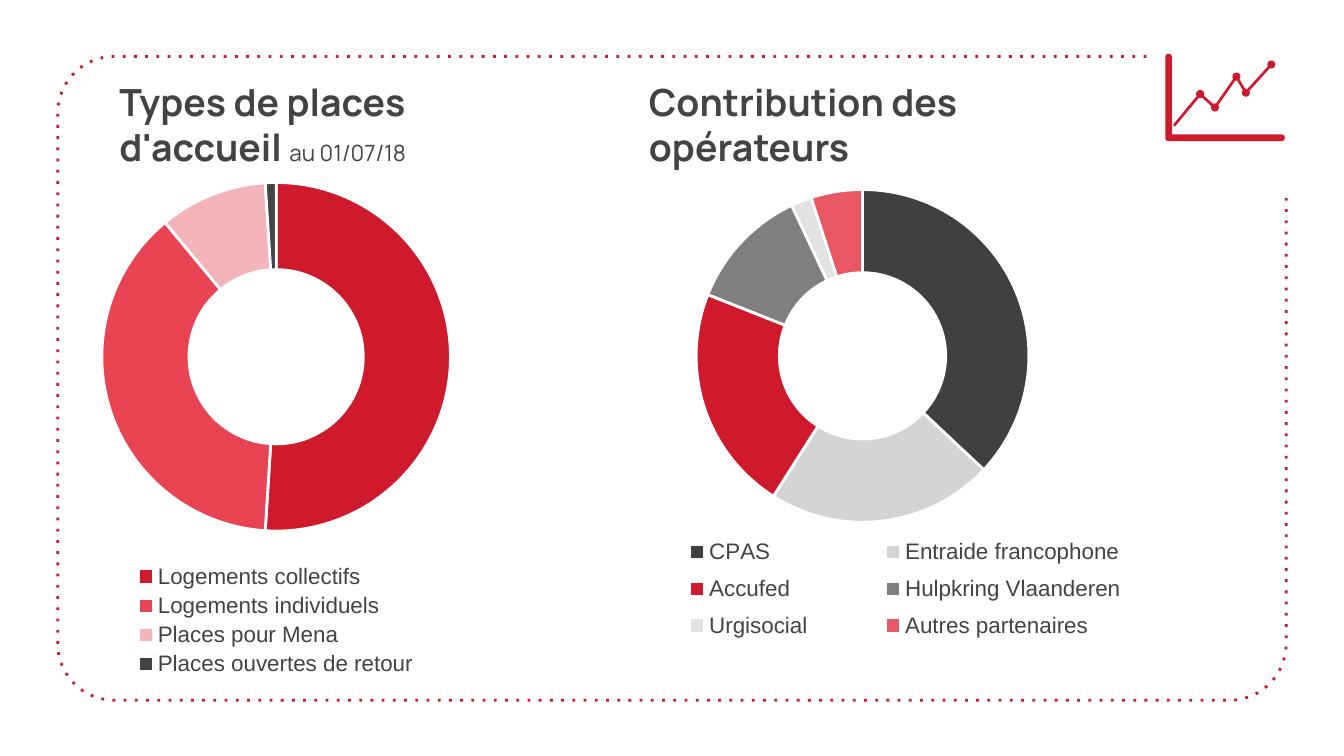
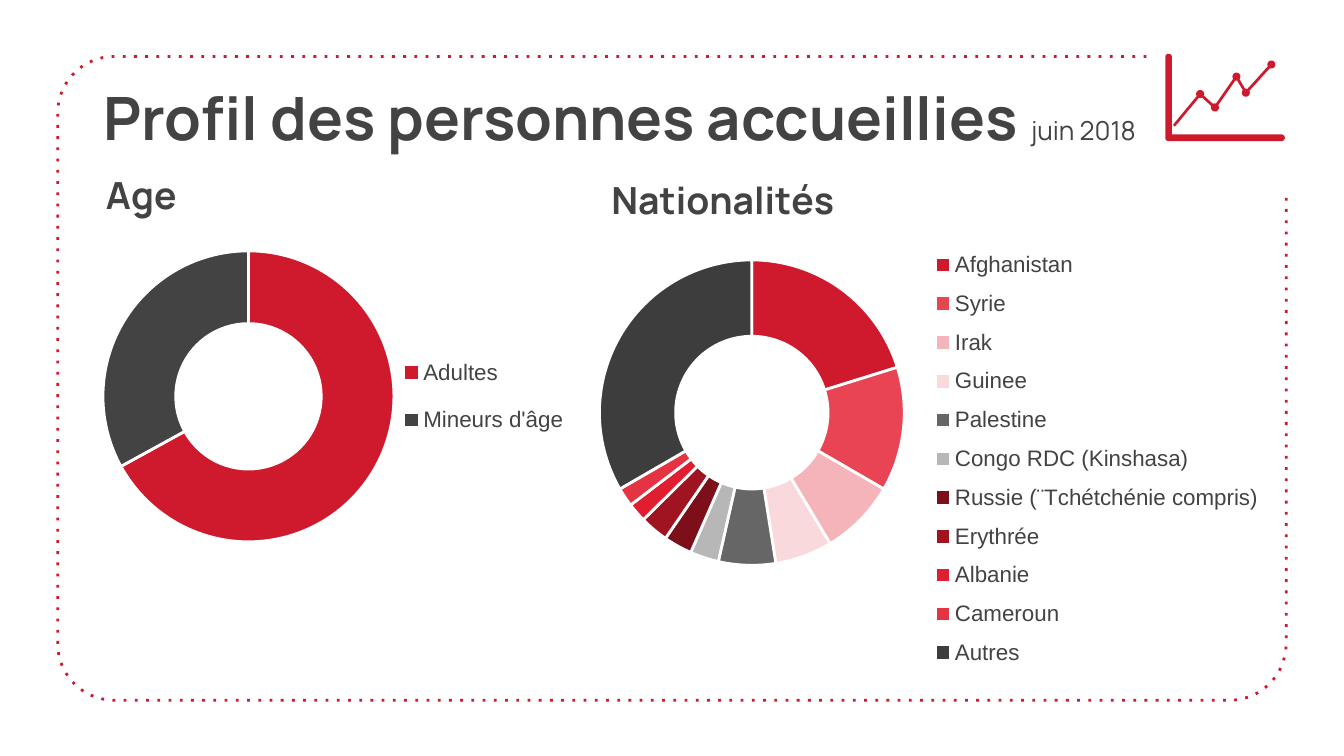
import math
from dataclasses import dataclass

import lxml.etree
import pptx
import pptx.chart.data
import pptx.dml.color
import pptx.enum.chart
import pptx.enum.text
import pptx.oxml.ns
import pptx.util

Inches = pptx.util.Inches
Pt = pptx.util.Pt
qn = pptx.oxml.ns.qn


@dataclass(frozen=True)
class Theme:
    heading_font: str = "Manrope"
    chart_font: str = "Arial"
    red: str = "CF192C"
    coral: str = "E84454"
    pink: str = "F5B4BA"
    pale_pink: str = "FAD9DC"
    text: str = "434343"
    grey: str = "7F7F7F"
    white: str = "FFFFFF"
    title_size: float = 32
    heading_size: float = 20
    date_size: float = 14
    small_date_size: float = 12
    legend_size: float = 12
    chart_size: float = 10


def rgb(value):
    return pptx.dml.color.RGBColor.from_string(value)


def apply(target, formats):
    for name, value in formats.items():
        setattr(target, name, value)


def arc(center, radius, start, end, steps):
    x, y = center
    angles = [start + (end - start) * step / steps for step in range(steps + 1)]
    return [(x + radius * math.cos(a), y + radius * math.sin(a)) for a in angles]


def marker_line_outline(nodes, marker_radius, half_width):
    walk = nodes + nodes[-2:0:-1]
    points = []
    for index, node in enumerate(walk):
        before, after = walk[index - 1], walk[(index + 1) % len(walk)]
        radius = half_width if index == 0 else marker_radius
        spread = math.asin(half_width / radius)
        start = math.atan2(before[1] - node[1], before[0] - node[0]) - spread
        end = math.atan2(after[1] - node[1], after[0] - node[0]) + spread
        sweep = (start - end) % math.tau
        points += arc(node, radius, start, start - sweep, 10)
    return points


class Deck:
    def __init__(self, theme):
        self.theme = theme
        self.presentation = pptx.Presentation()
        self.presentation.slide_width = Inches(10)
        self.presentation.slide_height = Inches(10) * 9 // 16
        self.slide = None

    def add_slide(self):
        layout = self.presentation.slide_layouts[6]
        self.slide = self.presentation.slides.add_slide(layout)
        fill = self.slide.background.fill
        fill.solid()
        fill.fore_color.rgb = rgb(self.theme.white)
        self.frame()
        self.trend_icon()

    def freeform(self, shapes, points, close=True):
        points = [(Inches(x), Inches(y)) for x, y in points]
        builder = shapes.build_freeform(*points[0])
        builder.add_line_segments(points[1:], close=close)
        shape = builder.convert_to_shape()
        shape.shadow.inherit = False
        return shape

    def frame(self):
        left, top, right, bottom, radius = 0.43, 0.42, 9.57, 5.21, 0.42
        corners = [
            ((left + radius, top + radius), -math.pi / 2),
            ((left + radius, bottom - radius), -math.pi),
            ((right - radius, bottom - radius), -math.pi * 3 / 2),
        ]
        points = [(8.53, top)]
        for center, start in corners:
            points += arc(center, radius, start, start - math.pi / 2, 15)
        points.append((right, 1.46))
        shape = self.freeform(self.slide.shapes, points, close=False)
        shape.fill.background()
        shape.line.color.rgb = rgb(self.theme.red)
        shape.line.width = Pt(1.5)
        line = shape.element.spPr.find(qn("a:ln"))
        lxml.etree.SubElement(line, qn("a:prstDash")).set("val", "dot")

    def trend_icon(self):
        group = self.slide.shapes.add_group_shape()
        half = 0.05 / 2
        left, top, right, bottom = 8.67 + half, 0.4 + half, 9.56 - half, 1.05 - half
        axis = [(left + half, bottom - half)]
        axis += arc((left, top), half, 0, -math.pi, 8)
        axis += arc((left, bottom), half, math.pi, math.pi / 2, 6)
        axis += arc((right, bottom), half, math.pi / 2, -math.pi / 2, 8)
        nodes = [(8.74, 0.93), (8.93, 0.7), (9.04, 0.8),
                 (9.2, 0.57), (9.27, 0.69), (9.46, 0.48)]
        for points in (axis, marker_line_outline(nodes, 0.03, 0.01)):
            shape = self.freeform(group.shapes, points)
            shape.fill.solid()
            shape.fill.fore_color.rgb = rgb(self.theme.red)
            shape.line.fill.background()

    def heading(self, left, top, text, size=None, date="", date_size=None, width=2.73):
        box = self.slide.shapes.add_textbox(
            Inches(left), Inches(top), Inches(width), Inches(0.94))
        margins = ("margin_left", "margin_top", "margin_right", "margin_bottom")
        apply(box.text_frame, {
            "word_wrap": True,
            "vertical_anchor": pptx.enum.text.MSO_ANCHOR.TOP,
            **dict.fromkeys(margins, Inches(0.1)),
        })
        paragraph = box.text_frame.paragraphs[0]
        runs = [(text, size or self.theme.heading_size, True)]
        if date:
            runs = [(text + " ", runs[0][1], True), (date, date_size, False)]
        for words, points, bold in runs:
            run = paragraph.add_run()
            run.text = words
            apply(run.font, {"name": self.theme.heading_font,
                             "size": Pt(points), "bold": bold})
            run.font.color.rgb = rgb(self.theme.text)

    def manual_layout(self, parent, position, area, inner=False):
        for existing in parent.findall(qn("c:layout")):
            parent.remove(existing)
        layout = parent.makeelement(qn("c:layout"))
        manual = lxml.etree.SubElement(layout, qn("c:manualLayout"))
        values = [("layoutTarget", "inner")] if inner else []
        values += [("xMode", "edge"), ("yMode", "edge")]
        values += zip("xywh", area)
        for name, value in values:
            lxml.etree.SubElement(manual, qn("c:" + name)).set("val", str(value))
        parent.insert(position, layout)

    def doughnut(self, box, slices, hole, legend_side, plot_area=None, legend_area=None):
        data = pptx.chart.data.CategoryChartData()
        data.categories = [name for name, value, color in slices]
        data.add_series("Series 1", [value for name, value, color in slices])
        chart = self.slide.shapes.add_chart(
            pptx.enum.chart.XL_CHART_TYPE.DOUGHNUT, *map(Inches, box), data).chart
        apply(chart, {"has_title": False, "has_legend": True})
        apply(chart.legend, {"position": legend_side, "include_in_layout": False})
        for font, size, color in (
            (chart.font, self.theme.chart_size, self.theme.grey),
            (chart.legend.font, self.theme.legend_size, self.theme.text),
        ):
            apply(font, {"name": self.theme.chart_font, "size": Pt(size)})
            font.color.rgb = rgb(color)
        plot = chart.plots[0]
        plot.vary_by_categories = True
        for index, (name, value, color) in enumerate(slices):
            point = plot.series[0].points[index].format
            point.fill.solid()
            point.fill.fore_color.rgb = rgb(color)
            point.line.color.rgb = rgb(self.theme.white)
            point.line.width = Pt(1.5)
        root = chart.element
        root.find(".//" + qn("c:holeSize")).set("val", str(hole))
        if plot_area:
            self.manual_layout(root.find(".//" + qn("c:plotArea")), 0, plot_area, True)
        if legend_area:
            self.manual_layout(root.find(".//" + qn("c:legend")), 1, legend_area)


def main():
    theme = Theme()
    deck = Deck(theme)
    side = pptx.enum.chart.XL_LEGEND_POSITION

    deck.add_slide()
    deck.heading(0.79, 0.49, "Types de places d'accueil",
                 date="au 01/07/18", date_size=theme.small_date_size)
    deck.doughnut((0.5, 1.22, 3.11, 3.85), [
        ("Logements collectifs", 51, theme.red),
        ("Logements individuels", 38, theme.coral),
        ("Places pour Mena", 10, theme.pink),
        ("Places ouvertes de retour", 1, theme.text),
    ], 72, side.BOTTOM)
    deck.doughnut((3.7, 1.22, 5.33, 3.81), [
        ("CPAS", 37, "404040"),
        ("Entraide francophone", 22, "D4D4D4"),
        ("Accufed", 22, theme.red),
        ("Hulpkring Vlaanderen", 12, theme.grey),
        ("Urgisocial", 2, "E2E2E2"),
        ("Autres partenaires", 5, "E95664"),
    ], 75, side.BOTTOM, (0.24, 0.05, 0.54, 0.65), (0.17, 0.71, 0.8, 0.24))
    deck.heading(4.73, 0.49, "Contribution des opérateurs")

    deck.add_slide()
    deck.heading(0.67, 0.5, "Profil des personnes accueillies", theme.title_size,
                 "juin 2018", theme.date_size, 8.55)
    deck.heading(0.69, 1.18, "Age")
    deck.heading(4.45, 1.22, "Nationalités")
    deck.doughnut((0.63, 1.44, 3.81, 3.05), [
        ("Adultes", 67, theme.red),
        ("Mineurs d'âge", 33, theme.text),
    ], 70, side.RIGHT, (0.03, 0.14, 0.58, 0.71), (0.6, 0.35, 0.36, 0.29))
    deck.doughnut((4.45, 1.65, 5.05, 4.06), [
        ("Afghanistan", 20, theme.red),
        ("Syrie", 13, theme.coral),
        ("Irak", 8, theme.pink),
        ("Guinee", 6, theme.pale_pink),
        ("Palestine", 6, "666666"),
        ("Congo RDC (Kinshasa)", 3, "B7B7B7"),
        ("Russie (¨Tchétchénie compris)", 3, "7C0F1A"),
        ("Erythrée", 3, "A01421"),
        ("Albanie", 2, "E11E30"),
        ("Cameroun", 2, "E43444"),
        ("Autres", 33, "3D3D3D"),
    ], 70, side.RIGHT, (0, 0.07, 0.45, 0.56), (0.48, 0.03, 0.51, 0.81))

    deck.presentation.save("out.pptx")


if __name__ == "__main__":
    main()
